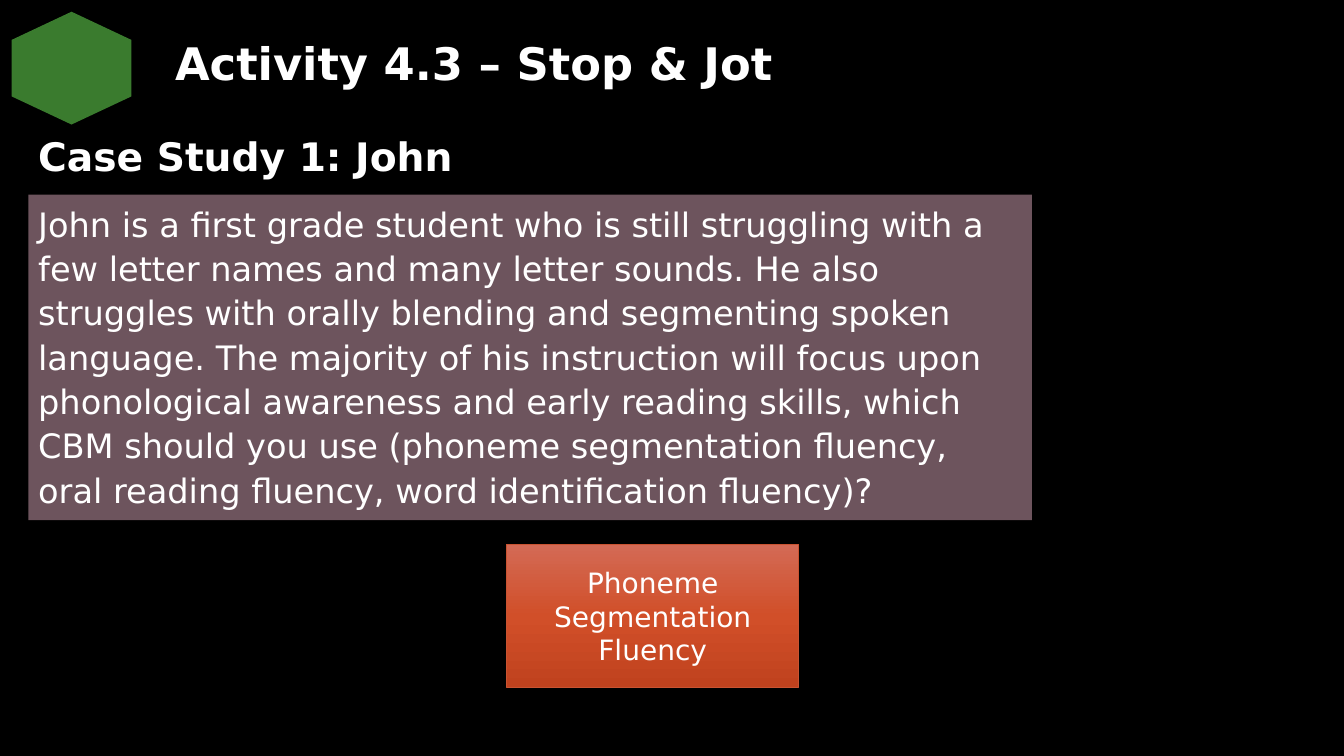
from copy import deepcopy
from dataclasses import dataclass

from pptx import Presentation
from pptx.dml.color import RGBColor
from pptx.enum import shapes, text
from pptx.util import Pt

TITLE = "Activity 4.3 – Stop & Jot"
CASE_HEADING = "Case Study 1: John"
CASE_TEXT = (
    "John is a first grade student who is still struggling with a few letter names "
    "and many letter sounds. He also struggles with orally blending and segmenting "
    "spoken language. The majority of his instruction will focus upon phonological "
    "awareness and early reading skills, which CBM should you use (phoneme "
    "segmentation fluency, oral reading fluency, word identification fluency)?"
)
ANSWER = "Phoneme Segmentation Fluency"

# Left, top, width, height in points
SLIDE_SIZE = (960, 540)
HEXAGON_BOX = (10.8, 5.8, 80.6, 85.7)
TITLE_BOX = (118, 13.7, 579, 57.6)
HEADING_BOX = (20.2, 90.7, 381, 41)
CASE_BOX = (20.2, 139, 717, 232.6)
ANSWER_BOX = (362, 388.8, 208.5, 102.2)


@dataclass(frozen=True)
class Theme:
    font: str = "DejaVu Sans"
    background: str = "000000"
    text: str = "FFFFFF"
    hexagon: str = "3A7B2E"
    case: str = "6D545D"
    answer_stops: tuple = ((0, "D36A55"), (0.5, "D14F29"), (1, "C0421E"))
    answer_line: str = "C95331"
    title_size: int = 32
    heading_size: int = 28
    case_size: int = 24
    answer_size: int = 20


THEME = Theme()


def color(value):
    return RGBColor.from_string(value)


def add_block(slide, kind, box, fill):
    shape = slide.shapes.add_shape(kind, *map(Pt, box))
    shape.shadow.inherit = False
    shape.line.fill.background()
    shape.fill.solid()
    shape.fill.fore_color.rgb = color(fill)
    return shape


def fill_gradient(shape, stops):
    """Fill the shape from top to bottom with any number of colour stops."""
    fill = shape.fill
    fill.gradient()
    fill.gradient_angle = 270
    stop_list = shape._element.spPr.gradFill.gsLst
    while len(stop_list) < len(stops):
        stop_list.append(deepcopy(stop_list[-1]))
    for stop, (position, value) in zip(fill.gradient_stops, stops):
        stop.position = position
        stop.color.rgb = color(value)


def write(shape, words, size, bold=False, spacing=1.0,
          align=text.PP_ALIGN.LEFT, anchor=text.MSO_ANCHOR.TOP):
    frame = shape.text_frame
    frame.text = words
    frame.word_wrap = True
    frame.vertical_anchor = anchor
    paragraph = frame.paragraphs[0]
    paragraph.alignment = align
    paragraph.line_spacing = spacing
    font = paragraph.runs[0].font
    font.name, font.size, font.bold = THEME.font, Pt(size), bold
    font.color.rgb = color(THEME.text)


def main():
    presentation = Presentation()
    presentation.slide_width, presentation.slide_height = map(Pt, SLIDE_SIZE)
    slide = presentation.slides.add_slide(presentation.slide_layouts[6])
    slide.background.fill.solid()
    slide.background.fill.fore_color.rgb = color(THEME.background)

    kinds = shapes.MSO_SHAPE
    hexagon = add_block(slide, kinds.HEXAGON, HEXAGON_BOX, THEME.hexagon)
    hexagon.rotation = 270

    title = slide.shapes.add_textbox(*map(Pt, TITLE_BOX))
    write(title, TITLE, THEME.title_size, bold=True, spacing=1.1,
          anchor=text.MSO_ANCHOR.MIDDLE)

    heading = slide.shapes.add_textbox(*map(Pt, HEADING_BOX))
    write(heading, CASE_HEADING, THEME.heading_size, bold=True)

    case = add_block(slide, kinds.RECTANGLE, CASE_BOX, THEME.case)
    write(case, CASE_TEXT, THEME.case_size, spacing=1.1)

    answer = add_block(slide, kinds.RECTANGLE, ANSWER_BOX, THEME.answer_line)
    fill_gradient(answer, THEME.answer_stops)
    answer.line.color.rgb = color(THEME.answer_line)
    answer.line.width = Pt(0.5)
    write(answer, ANSWER, THEME.answer_size, align=text.PP_ALIGN.CENTER,
          anchor=text.MSO_ANCHOR.MIDDLE)

    presentation.save("out.pptx")


if __name__ == "__main__":
    main()
